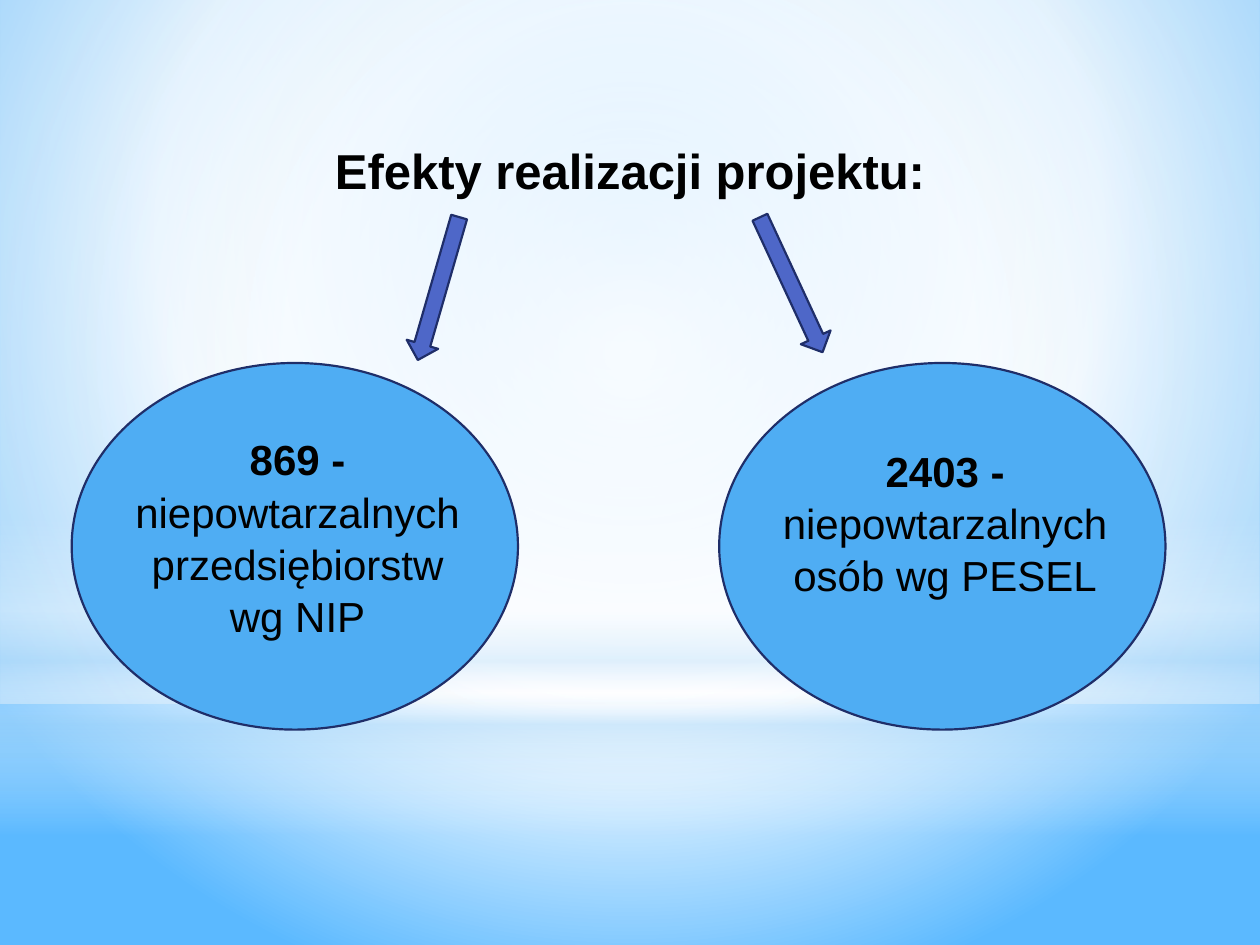
from lxml import etree
from pptx import Presentation
from pptx.dml.color import RGBColor
from pptx.enum.shapes import MSO_SHAPE
from pptx.enum.text import MSO_ANCHOR, MSO_AUTO_SIZE, PP_ALIGN
from pptx.oxml.ns import qn
from pptx.util import Pt

WIDTH, HEIGHT = 720, 540
FONT = "Arial"
COLORS = {
    "text": "000000", "outline": "1F2E69", "oval": "4FADF3", "arrow": "4E67C8",
    "white": "FFFFFF", "haze": "B4DCFA", "sky": "9ED5FF", "deep": "5BB9FF",
}
TITLE = "Efekty realizacji projektu:"

# Gradient stops: position %, colour, opacity %
BACKDROP = [(0, "sky", 100), (60, "white", 100), (100, "deep", 100)]
GLOW = [(0, "white", 89), (48, "white", 62), (100, "haze", 79)]
HORIZON = [(0, "white", 0), (29, "white", 30), (45, "haze", 40),
           (55, "white", 26), (65, "haze", 60), (100, "white", 0)]

RESULTS = [
    {"number": "869 - ", "label": "niepowtarzalnych przedsiębiorstw wg NIP",
     "text_top": 241.2, "text_height": 123.8,
     "arrow_left": 241.2, "arrow_top": 122.4, "rotation": 196.1},
    {"number": "2403 - ", "label": "niepowtarzalnych osób wg PESEL",
     "text_top": 247.7, "text_height": 94.3,
     "arrow_left": 442.8, "arrow_top": 120.2, "rotation": 155.1},
]
OVAL_LEFT, OVAL_TOP, OVAL_WIDTH, OVAL_HEIGHT = 41, 207.4, 255, 209.5
OVAL_STEP = 370
TEXT_INSET, TEXT_WIDTH = 25.3, 203.8
ARROW_WIDTH, ARROW_HEIGHT = 18.7, 85


def color(name):
    return RGBColor.from_string(COLORS[name])


def paint_gradient(fill, owner, stops, focus=None):
    """Shade radially around focus (left, top, right, bottom in %), else downwards."""
    fill.gradient()
    gradient = owner.find(".//" + qn("a:gradFill"))
    for child in list(gradient):
        gradient.remove(child)
    stop_list = etree.SubElement(gradient, qn("a:gsLst"))
    for position, name, opacity in stops:
        stop = etree.SubElement(stop_list, qn("a:gs"), pos=str(position * 1000))
        stop_color = etree.SubElement(stop, qn("a:srgbClr"), val=COLORS[name])
        if opacity < 100:
            etree.SubElement(stop_color, qn("a:alpha"), val=str(opacity * 1000))
    if focus:
        path = etree.SubElement(gradient, qn("a:path"), path="circle")
        sides = {side: str(value * 1000) for side, value in zip("ltrb", focus)}
        etree.SubElement(path, qn("a:fillToRect"), **sides)
    else:
        etree.SubElement(gradient, qn("a:lin"), ang="5400000", scaled="0")


def add_plain_shape(slide, kind, left, top, width, height):
    shape = slide.shapes.add_shape(kind, Pt(left), Pt(top), Pt(width), Pt(height))
    shape.shadow.inherit = False
    shape.line.fill.background()
    return shape


def add_outlined_shape(slide, kind, fill, *box):
    shape = add_plain_shape(slide, kind, *box)
    shape.fill.solid()
    shape.fill.fore_color.rgb = color(fill)
    shape.line.color.rgb = color("outline")
    shape.line.width = Pt(1.25)
    return shape


def format_run(run, size, bold):
    run.font.name = FONT
    run.font.size = Pt(size)
    run.font.bold = bold
    run.font.color.rgb = color("text")


def add_scenery(slide):
    paint_gradient(slide.background.fill, slide.element, BACKDROP, (20, 10, 20, 60))
    for top, height, stops, focus in [(0, 401.8, GLOW, (50, 50, 50, 50)),
                                      (296.6, 180, HORIZON, None)]:
        shape = add_plain_shape(slide, MSO_SHAPE.RECTANGLE, 0, top, WIDTH, height)
        paint_gradient(shape.fill, shape.element, stops, focus)


def add_title(slide):
    title = slide.shapes.title
    slide.shapes.element.append(title.element)  # in front of the scenery
    title.left, title.top, title.width, title.height = Pt(0), Pt(54.7), Pt(WIDTH), Pt(85)
    frame = title.text_frame
    frame.text = TITLE
    frame.auto_size = MSO_AUTO_SIZE.NONE
    frame.vertical_anchor = MSO_ANCHOR.MIDDLE
    frame.paragraphs[0].alignment = PP_ALIGN.CENTER
    format_run(frame.paragraphs[0].runs[0], 28, True)


def add_result_text(slide, result, left):
    box = slide.shapes.add_textbox(Pt(left), Pt(result["text_top"]),
                                   Pt(TEXT_WIDTH), Pt(result["text_height"]))
    frame = box.text_frame
    frame.word_wrap = True
    frame.margin_left = Pt(10.8)
    frame.margin_top = Pt(5.5)
    paragraph = frame.paragraphs[0]
    paragraph.alignment = PP_ALIGN.CENTER
    paragraph.line_spacing = 1.04
    for key, bold in [("number", True), ("label", False)]:
        run = paragraph.add_run()
        run.text = result[key]
        format_run(run, 24, bold)


def main():
    presentation = Presentation()
    presentation.slide_width, presentation.slide_height = Pt(WIDTH), Pt(HEIGHT)
    slide = presentation.slides.add_slide(presentation.slide_layouts[5])
    add_scenery(slide)
    add_title(slide)
    for index, result in enumerate(RESULTS):
        left = OVAL_LEFT + index * OVAL_STEP
        add_outlined_shape(slide, MSO_SHAPE.OVAL, "oval",
                           left, OVAL_TOP, OVAL_WIDTH, OVAL_HEIGHT)
        add_result_text(slide, result, left + TEXT_INSET)
        arrow = add_outlined_shape(slide, MSO_SHAPE.UP_ARROW, "arrow",
                                   result["arrow_left"], result["arrow_top"],
                                   ARROW_WIDTH, ARROW_HEIGHT)
        arrow.rotation = result["rotation"]
    presentation.save("out.pptx")


if __name__ == "__main__":
    main()
